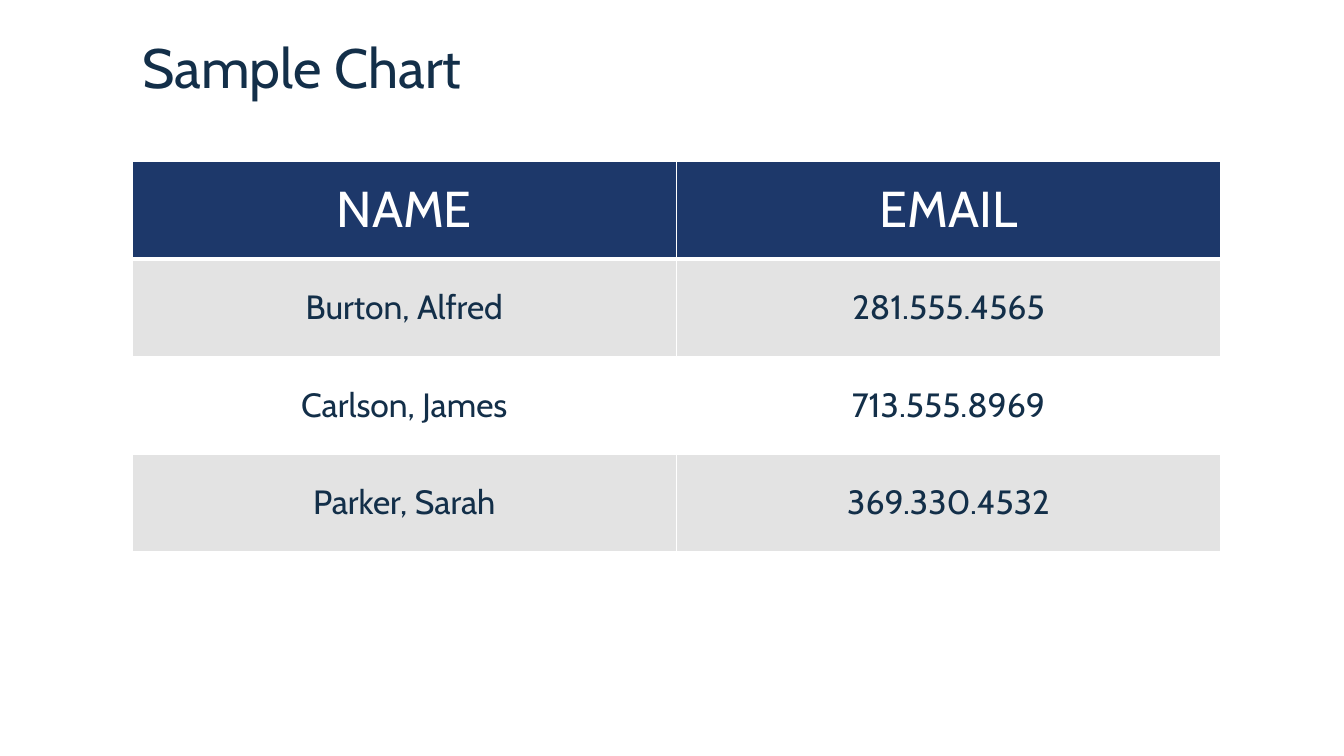
from lxml.etree import SubElement
from pptx import Presentation
from pptx.dml.color import RGBColor
from pptx.enum.text import MSO_ANCHOR as Anchor, MSO_AUTO_SIZE as AutoSize, PP_ALIGN as Align
from pptx.oxml.ns import qn
from pptx.util import Cm, Pt

INK = RGBColor(0x13, 0x2F, 0x49)
NAVY = RGBColor(0x1D, 0x38, 0x6A)
GREY = RGBColor(0xE3, 0xE3, 0xE3)
WHITE = RGBColor(0xFF, 0xFF, 0xFF)

LEFT, WIDTH = Cm(3.33), Cm(27.43)
ROW_HEIGHT = Cm(2.46)
CONTACTS = [
    ("NAME", "EMAIL"),
    ("Burton, Alfred", "281.555.4565"),
    ("Carlson, James", "713.555.8969"),
    ("Parker, Sarah", "369.330.4532"),
]


class SlideBuilder:
    """Holds the typeface and the slide being filled."""

    def __init__(self, presentation, typeface):
        self.typeface = typeface
        self.slide = presentation.slides.add_slide(presentation.slide_layouts[5])

    def add_text(self, frame, text, size, color, align):
        frame.word_wrap = True
        paragraph = frame.paragraphs[0]
        paragraph.alignment = align
        run = paragraph.add_run()
        run.text = text
        run.font.name = self.typeface
        run.font.size = Pt(size)
        run.font.bold = False
        run.font.color.rgb = color
        return paragraph

    def title(self, text):
        title = self.slide.shapes.title
        title.left, title.top, title.width, title.height = LEFT, Cm(1.02), WIDTH, Cm(1.52)
        frame = title.text_frame
        frame.auto_size = AutoSize.NONE
        frame.vertical_anchor = Anchor.MIDDLE
        self.add_text(frame, text, 39.6, INK, Align.LEFT).line_spacing = 0.9

    def border(self, cell, bottom):
        """Draws white cell borders; bottom is the width of the lower one in points."""
        properties = cell._tc.get_or_add_tcPr()
        for side, width in (("L", 1), ("R", 1), ("T", 1), ("B", bottom)):
            line = SubElement(properties, qn(f"a:ln{side}"), w=str(Pt(width)))
            fill = SubElement(line, qn("a:solidFill"))
            SubElement(fill, qn("a:srgbClr"), val=str(WHITE))

    def cell(self, cell, text, size, color, fill, bottom):
        self.border(cell, bottom)
        if fill is None:
            cell.fill.background()
        else:
            cell.fill.solid()
            cell.fill.fore_color.rgb = fill
        cell.vertical_anchor = Anchor.MIDDLE
        self.add_text(cell.text_frame, text, size, color, Align.CENTER)

    def table(self, rows):
        table = self.slide.shapes.add_table(
            len(rows), len(rows[0]), LEFT, Cm(4.06), WIDTH, ROW_HEIGHT * len(rows)
        ).table
        table.horz_banding = False
        table.first_row = True
        for row_index, row in enumerate(rows):
            if row_index == 0:
                style = (36, WHITE, NAVY, 3)
            else:
                style = (24, INK, GREY if row_index % 2 else None, 1)
            for column_index, text in enumerate(row):
                self.cell(table.cell(row_index, column_index), text, *style)


def main():
    presentation = Presentation()
    presentation.slide_width, presentation.slide_height = Cm(33.87), Cm(19.05)
    builder = SlideBuilder(presentation, "Cabin")
    builder.title("Sample Chart")
    builder.table(CONTACTS)
    presentation.save("out.pptx")


if __name__ == "__main__":
    main()
